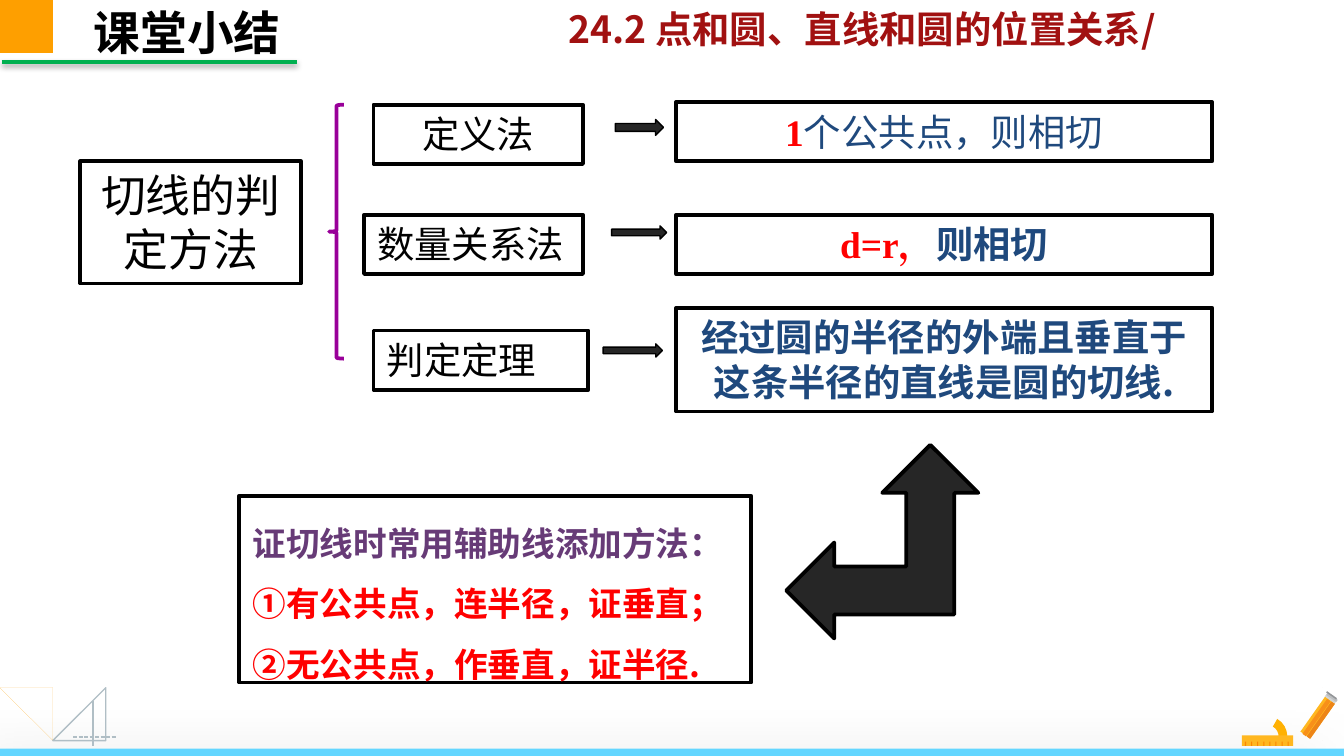
from math import cos, radians, sin

from lxml import etree
from pptx import Presentation
from pptx.dml.color import RGBColor
from pptx.enum.dml import MSO_LINE
from pptx.enum.shapes import MSO_CONNECTOR, MSO_SHAPE as SHAPE
from pptx.enum.text import MSO_ANCHOR, MSO_AUTO_SIZE, PP_ALIGN
from pptx.oxml.ns import qn
from pptx.util import Cm, Pt

BLACK = RGBColor(0x00, 0x00, 0x00)
DARK = RGBColor(0x26, 0x26, 0x26)
RED = RGBColor(0xFF, 0x00, 0x00)
MAROON = RGBColor(0xA1, 0x11, 0x11)
NAVY = RGBColor(0x1F, 0x49, 0x7D)
VIOLET = RGBColor(0x67, 0x3B, 0x77)
PURPLE = RGBColor(0x99, 0x00, 0x99)
GREEN = RGBColor(0x00, 0xB0, 0x50)
SKY = RGBColor(0x63, 0xD6, 0xFF)
ORANGE = RGBColor(0xFE, 0x9F, 0x00)
AMBER = RGBColor(0xFF, 0xB7, 0x20)
ARC_AMBER = RGBColor(0xFF, 0xB1, 0x03)
TICK = RGBColor(0xFB, 0x85, 0x01)
PENCIL_DARK = RGBColor(0xED, 0x85, 0x18)
PENCIL_MID = RGBColor(0xF8, 0x90, 0x19)
WOOD = RGBColor(0xF4, 0xCF, 0xB2)
LEAD = RGBColor(0xE7, 0x4C, 0x3C)
ERASER = RGBColor(0xE2, 0x43, 0x48)
METALS = [RGBColor(0xD1, 0xD3, 0xD4), RGBColor(0xBC, 0xBE, 0xC0), RGBColor(0x93, 0x95, 0x98)]
GREY = RGBColor(0xB0, 0xBE, 0xC5)
SANS, SERIF = "Noto Sans CJK SC", "Times New Roman"


def style(sp, fill=None, line=None, width=2):
    sp.shadow.inherit = False
    if fill is None:
        sp.fill.background()
    else:
        sp.fill.solid()
        sp.fill.fore_color.rgb = fill
    if line is None:
        sp.line.fill.background()
    else:
        sp.line.color.rgb = line
        sp.line.width = Pt(width)
    return sp


def add_shape(s, kind, box, fill=None, line=None, width=2, adj=(), turn=0):
    sp = s.shapes.add_shape(kind, *map(Cm, box))
    for i, value in enumerate(adj):
        sp.adjustments[i] = value
    sp.rotation = turn
    return style(sp, fill, line, width)


def add_outline(s, x, y, contours, fill=None, line=None, width=2):
    """Closed contours in cm, measured from (x, y)."""
    contours = [[(x + px, y + py) for px, py in pts] for pts in contours]
    fb = s.shapes.build_freeform(*contours[0][0], scale=Cm(1))
    for i, pts in enumerate(contours):
        if i:
            fb.move_to(*pts[0])
        fb.add_line_segments(pts[1:], close=True)
    return style(fb.convert_to_shape(), fill, line, width)


def add_line(s, x1, y1, x2, y2, color, width):
    ln = s.shapes.add_connector(MSO_CONNECTOR.STRAIGHT, *map(Cm, (x1, y1, x2, y2)))
    ln.line.color.rgb = color
    ln.line.width = Pt(width)
    etree.SubElement(ln._element.spPr, qn("a:effectLst"))
    return ln


def add_shadow(sp, alpha, blur, dist, angle):
    effects = sp._element.spPr.find(qn("a:effectLst"))
    shadow = etree.SubElement(effects, qn("a:outerShdw"), blurRad=str(Pt(blur)),
                              dist=str(Pt(dist)), dir=str(angle * 60000), rotWithShape="0")
    color = etree.SubElement(shadow, qn("a:srgbClr"), val=str(BLACK))
    etree.SubElement(color, qn("a:alpha"), val=str(alpha * 1000))


def set_text(sp, paragraphs, size, align=PP_ALIGN.LEFT, wrap=True, spacing=None):
    """Each paragraph is a list of (text, color, bold, font) runs."""
    tf = sp.text_frame
    frame = dict(word_wrap=wrap, auto_size=MSO_AUTO_SIZE.NONE, vertical_anchor=MSO_ANCHOR.TOP)
    for name, value in frame.items():
        setattr(tf, name, value)
    for i, runs in enumerate(paragraphs):
        p = tf.add_paragraph() if i else tf.paragraphs[0]
        pPr = p._p.get_or_add_pPr()
        pPr.set("marL", "0")
        pPr.set("indent", "0")
        etree.SubElement(pPr, qn("a:buNone"))
        for name, value in dict(alignment=align, line_spacing=spacing, space_before=Pt(0)).items():
            setattr(p, name, value)
        for text, color, bold, font in runs:
            r = p.add_run()
            r.text = text
            for name, value in dict(size=Pt(size), bold=bold, name=font).items():
                setattr(r.font, name, value)
            r.font.color.rgb = color
            etree.SubElement(r._r.get_or_add_rPr(), qn("a:ea"), typeface=font)


def place(sp, box):
    for name, value in zip(("left", "top", "width", "height"), box):
        setattr(sp, name, Cm(value))


def sector(cx, cy, radius, start, end, apex):
    angles = [radians(start + (end - start) * i / 40) for i in range(41)]
    return [(cx + radius * cos(a), cy + radius * sin(a)) for a in angles] + [apex]


def header(s, x, y):
    # Lesson name, section title, underline and pie icon
    place(s.shapes.title, (x + 1.52, y - 0.05, 4.09, 1.32))
    set_text(s.shapes.title, [[("课堂小结", BLACK, True, SANS)]], 25, wrap=False)
    lesson = s.shapes.add_textbox(*map(Cm, (x + 10.49, y, 11.99, 1.12)))
    set_text(lesson, [[("24.2 点和圆、直线和圆的位置关系/", MAROON, True, SANS)]], 20, wrap=False)
    add_shadow(add_line(s, x + 0.03, y + 1.17, x + 5.61, y + 1.17, GREEN, 2), 38, 3.1, 1.6, 90)
    add_outline(s, x, y, [sector(0.88, 0.6, 0.44, 18, 315, (0.86, 0.64)),
                          sector(0.88, 0.6, 0.57, -37, 12, (0.99, 0.58))], ORANGE)


def methods(s, x, y):
    # Root box, brace, then one row per method: name, arrow, conclusion
    def box(area, runs, size=20, align=PP_ALIGN.CENTER):
        bx, by, w, h = area
        sp = add_shape(s, SHAPE.RECTANGLE, (x + bx, y + by, w, h), line=BLACK)
        set_text(sp, [runs], size, align)

    box((0, 1.12, 4.17, 2.31), [("切线的判定方法", BLACK, False, SANS)], 24)
    add_shape(s, SHAPE.LEFT_BRACE, (x + 4.7, y + 0.05, 0.28, 4.8), line=PURPLE, adj=(0.074, 0.5))
    rows = [
        ("定义法", (5.54, 0.05, 3.96, 1.12), PP_ALIGN.CENTER, (10.11, 0.33, 0.91, 0.3),
         (0, 1.12), [("1", RED, True, SERIF), ("个公共点，则相切", NAVY, False, SANS)]),
        ("数量关系法", (5.36, 2.13, 4.14, 1.12), PP_ALIGN.LEFT, (10.04, 2.34, 1.04, 0.25),
         (2.13, 1.12), [("d=r，", RED, True, SERIF), ("则相切", NAVY, True, SANS)]),
        ("判定定理", (5.54, 4.32, 4.06, 1.12), PP_ALIGN.LEFT, (9.88, 4.57, 1.12, 0.25),
         (3.89, 1.96), [("经过圆的半径的外端且垂直于这条半径的直线是圆的切线.", NAVY, True, SANS)]),
    ]
    for name, area, align, (ax, ay, aw, ah), (top, height), result in rows:
        box(area, [(name, BLACK, False, SANS)], align=align)
        add_shape(s, SHAPE.RIGHT_ARROW, (x + ax, y + ay, aw, ah), DARK, BLACK, 0.75, (0.5, 0.5))
        box((11.26, top, 10.13, height), result)


def auxiliary_lines(s, x, y):
    # Boxed list and the bent arrow joining it to the theorem
    body = s.placeholders[1]
    place(body, (x, y, 9.68, 3.53))
    body.line.color.rgb = BLACK
    body.line.width = Pt(2)
    items = [("证切线时常用辅助线添加方法：", VIOLET), ("①有公共点，连半径，证垂直；", RED),
             ("②无公共点，作垂直，证半径.", RED)]
    set_text(body, [[(text, color, True, SANS)] for text, color in items], 18, spacing=1.5)
    add_shape(s, SHAPE.LEFT_UP_ARROW, (x + 10.34, y - 0.96, 3.63, 3.66), DARK, BLACK)


def ruler(s, x, y):
    contours = [[(0.15, 0), (0, 0.18), (0.94, 1.12), (1.12, 0.94)]]
    for i in range(21):
        tx, ty = 0.05 + 0.043 * i, 0.18 + 0.043 * i
        d, w = 0.045 if i % 2 else 0.09, 0.02
        contours.append([(tx, ty), (tx + d, ty - d), (tx + d + w, ty - d + w), (tx + w, ty + w)])
    add_outline(s, x, y, contours, ORANGE)


def pyramid(s, x, y):
    add_outline(s, x, y, [[(0.41, 0.02), (0.01, 0.7), (0.41, 0.88), (0.88, 0.7)]],
                line=GREY, width=0.75)
    add_line(s, x + 0.41, y + 0.02, x + 0.41, y + 0.88, GREY, 0.75)
    base = add_line(s, x + 0.03, y + 0.7, x + 0.86, y + 0.7, GREY, 0.75)
    base.line.dash_style = MSO_LINE.SQUARE_DOT


def protractor(s, x, y):
    add_shape(s, SHAPE.BLOCK_ARC, (x + 0.1, y, 0.76, 0.76), ARC_AMBER, adj=(180, 0, 0.217))
    add_shape(s, SHAPE.RECTANGLE, (x, y + 0.36, 0.97, 0.2), AMBER)
    for i in range(8):
        add_shape(s, SHAPE.RECTANGLE, (x + 0.06 + 0.115 * i, y + 0.48, 0.02, 0.08), TICK)


def pencil(s, x, y):
    bars = [(0.29, 0.11, 0.23, 0.81, AMBER), (0.42, 0.16, 0.08, 0.81, PENCIL_DARK),
            (0.34, 0.11, 0.08, 0.81, PENCIL_MID), (0.54, 0.11, 0.23, 0.08, METALS[0]),
            (0.56, 0.11, 0.23, 0.05, METALS[1]), (0.55, 0.08, 0.23, 0.03, METALS[2])]
    for bx, by, w, h, color in bars:
        add_shape(s, SHAPE.RECTANGLE, (x + bx, y + by, w, h), color, turn=35.2)
    for color, pts in [
        (ERASER, [(0.75, 0.03), (0.67, 0.02), (0.6, 0.06), (0.77, 0.18), (0.8, 0.1)]),
        (WOOD, [(0.06, 0.95), (0.11, 1), (0.27, 0.89), (0.19, 0.82), (0.09, 0.79)]),
        (LEAD, [(0.06, 0.95), (0.06, 1), (0.11, 1)]),
    ]:
        add_outline(s, x, y, [pts], color)


def footer(s, x, y):
    # Bottom bar with drawing tools in both corners
    bar = add_shape(s, SHAPE.RECTANGLE, (x, y + 1.17, 25.4, 0.15), SKY)
    add_shadow(bar, 50, 35, 20, 135)
    protractor(s, x + 23.47, y + 0.56)
    pencil(s, x + 24.5, y + 0.07)
    ruler(s, x + 0.15, y)
    pyramid(s, x + 1.35, y + 0.25)


def main():
    prs = Presentation()
    prs.slide_width, prs.slide_height = Cm(25.4), Cm(14.29)
    s = prs.slides.add_slide(prs.slide_layouts[1])
    footer(s, 0, 12.98)
    methods(s, 1.52, 1.93)
    auxiliary_lines(s, 4.52, 9.37)
    header(s, 0, 0)
    prs.save("out.pptx")


if __name__ == "__main__":
    main()
